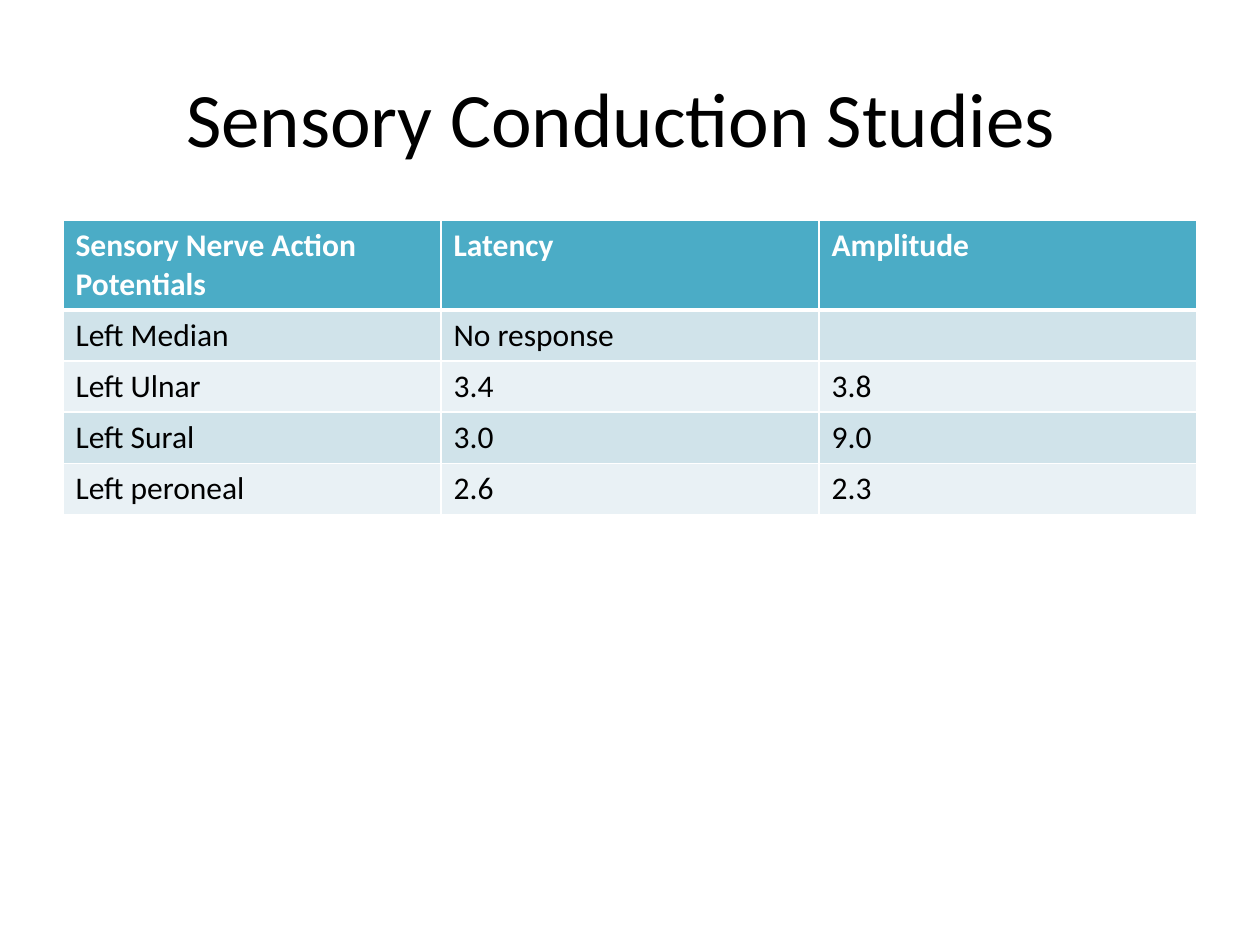
from dataclasses import dataclass

from lxml import etree
from pptx import Presentation
from pptx.dml.color import RGBColor
from pptx.enum.text import MSO_ANCHOR, PP_ALIGN
from pptx.oxml.ns import qn
from pptx.util import Inches, Pt

CENTER = PP_ALIGN.CENTER
MIDDLE = MSO_ANCHOR.MIDDLE
TITLE_ONLY = 5
GRID_COLUMNS, GRID_ROWS = 20, 150

STUDIES = [
    ("Sensory Nerve Action Potentials", "Latency", "Amplitude"),
    ("Left Median", "No response", ""),
    ("Left Ulnar", "3.4", "3.8"),
    ("Left Sural", "3.0", "9.0"),
    ("Left peroneal", "2.6", "2.3"),
]


@dataclass(frozen=True)
class Theme:
    font: str = "Calibri"
    title_size: int = 44
    body_size: int = 18
    text: str = "000000"
    header_text: str = "FFFFFF"
    header_fill: str = "4BACC6"
    bands: tuple = ("D0E3EA", "E9F1F5")
    rule: str = "FFFFFF"
    rule_width: int = 1
    header_rule_width: int = 3


class SlideBuilder:
    def __init__(self, deck, theme):
        self.theme = theme
        self.slide = deck.slides.add_slide(deck.slide_layouts[TITLE_ONLY])
        self.column = deck.slide_width / GRID_COLUMNS
        self.row = deck.slide_height / GRID_ROWS

    def box(self, column, row, columns, rows):
        """Turn a grid area into left, top, width and height."""
        return (int(column * self.column), int(row * self.row),
                int(columns * self.column), int(rows * self.row))

    def add_run(self, paragraph, wording, size, color, bold=False):
        run = paragraph.add_run()
        run.text = wording
        run.font.name = self.theme.font
        run.font.size = Pt(size)
        run.font.bold = bold
        run.font.color.rgb = RGBColor.from_string(color)

    def title(self, wording, area):
        heading = self.slide.shapes.title
        heading.left, heading.top, heading.width, heading.height = self.box(*area)
        frame = heading.text_frame
        frame.word_wrap = True
        frame.vertical_anchor = MIDDLE
        paragraph = frame.paragraphs[0]
        paragraph.alignment = CENTER
        self.add_run(paragraph, wording, self.theme.title_size, self.theme.text)

    def rule_cell(self, cell, top, bottom):
        """Draw the four borders, with the given top and bottom widths."""
        side = self.theme.rule_width
        properties = cell._tc.get_or_add_tcPr()
        for edge, width in (("L", side), ("R", side), ("T", top), ("B", bottom)):
            line = etree.SubElement(properties, qn(f"a:ln{edge}"), w=str(Pt(width)))
            fill = etree.SubElement(line, qn("a:solidFill"))
            etree.SubElement(fill, qn("a:srgbClr"), val=self.theme.rule)

    def table(self, records, area):
        theme = self.theme
        table = self.slide.shapes.add_table(
            len(records), len(records[0]), *self.box(*area)).table
        for r, record in enumerate(records):
            header = r == 0
            fill = theme.header_fill if header else theme.bands[(r - 1) % 2]
            color = theme.header_text if header else theme.text
            top = theme.header_rule_width if r == 1 else theme.rule_width
            bottom = theme.header_rule_width if header else theme.rule_width
            for c, wording in enumerate(record):
                cell = table.cell(r, c)
                self.rule_cell(cell, top, bottom)
                cell.fill.solid()
                cell.fill.fore_color.rgb = RGBColor.from_string(fill)
                if wording:
                    self.add_run(cell.text_frame.paragraphs[0], wording,
                                 theme.body_size, color, header)


def main():
    deck = Presentation()
    deck.slide_width, deck.slide_height = Inches(10), Inches(7.5)
    builder = SlideBuilder(deck, Theme())
    builder.title("Sensory Conduction Studies ", (1, 6, 18, 25))
    builder.table(STUDIES, (1, 35, 18, 8 * len(STUDIES)))
    deck.save("out.pptx")


if __name__ == "__main__":
    main()
